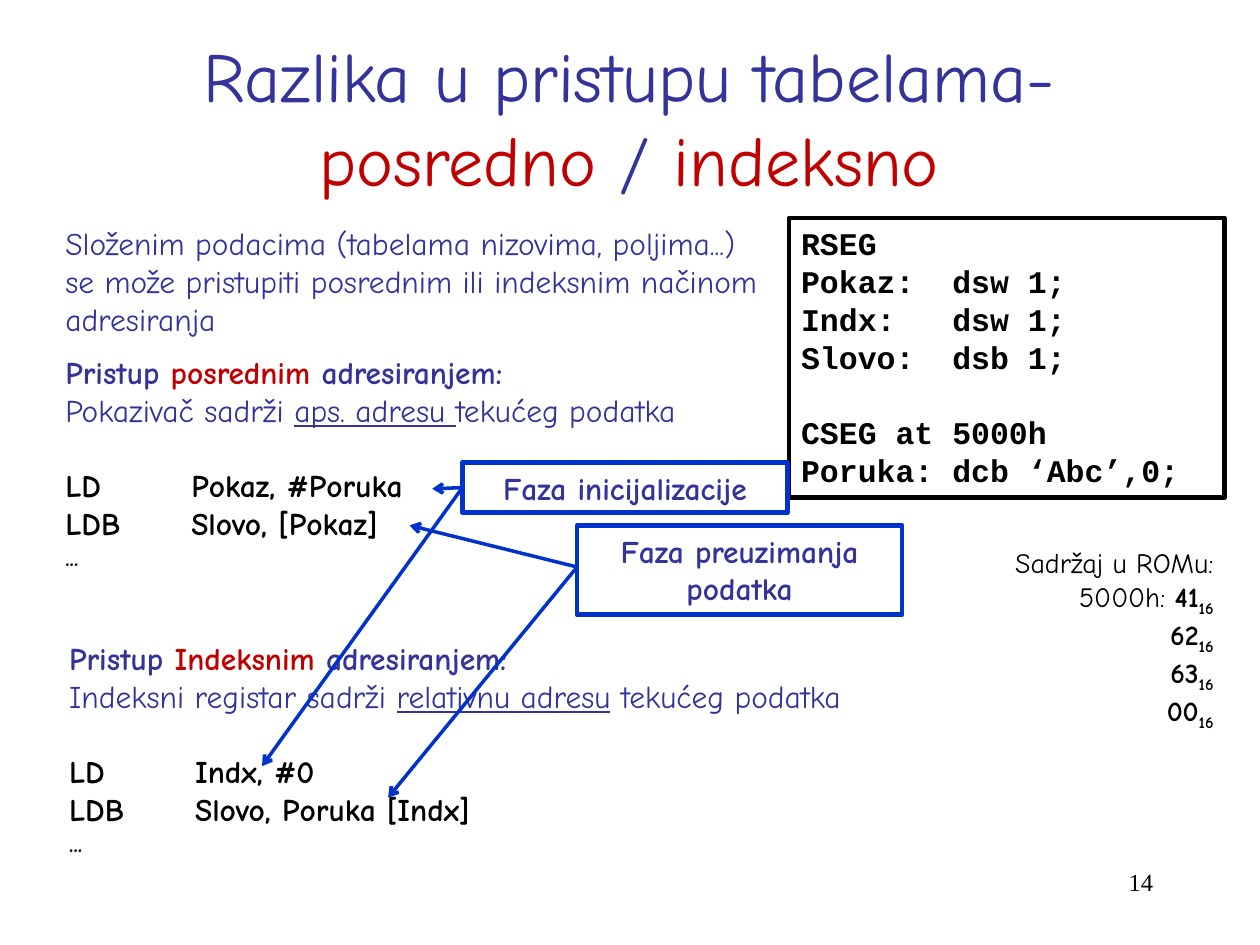
from lxml.etree import SubElement
from pptx import Presentation
from pptx.dml.color import RGBColor
from pptx.enum.shapes import MSO_CONNECTOR as Link, MSO_SHAPE as Shape
from pptx.enum.text import MSO_ANCHOR as Anchor, MSO_AUTO_SIZE as Fit, PP_ALIGN as Align
from pptx.oxml.ns import qn
from pptx.util import Inches, Pt

COLORS = {"navy": "333399", "red": "C00000", "blue": "0033CC",
          "black": "000000", "white": "FFFFFF"}
COMIC, MONO, SERIF = "Comic Neue", "Courier New", "Times New Roman"
GAP = Pt(21.7)


def color(name):
    return RGBColor.from_string(COLORS[name])


def add_run(para, text, size=18, face=COMIC, hue="navy", bold=False, under=False, sub=False):
    run = para.add_run()
    run.text = text
    font = run.font
    font.size, font.name, font.bold = Pt(size), face, bold
    font.color.rgb = color(hue)
    if under:
        font.underline = True
    if sub:
        run._r.get_or_add_rPr().set("baseline", "-25000")


def add_tab(para, stop):
    tabs = SubElement(para._p.get_or_add_pPr(), qn("a:tabLst"))
    SubElement(tabs, qn("a:tab"), pos=str(stop), algn="l")


def fill_text(shape, lines, align=Align.LEFT, anchor=Anchor.TOP, **base):
    """Write lines, each a list of (text, changes to the base format)."""
    frame = shape.text_frame
    frame.word_wrap, frame.auto_size = True, Fit.NONE
    frame.vertical_anchor = anchor
    for num, line in enumerate(lines):
        para = frame.paragraphs[0] if num == 0 else frame.add_paragraph()
        para.alignment = align
        for text, change in line:
            add_run(para, text, **{**base, **change})
    return frame.paragraphs


def add_text(slide, place, lines, **style):
    box = slide.shapes.add_textbox(*map(Inches, place))
    return fill_text(box, lines, **style)


def add_box(slide, place, lines, edge=None, width=2.75, **style):
    box = slide.shapes.add_shape(Shape.RECTANGLE, *map(Inches, place))
    box.shadow.inherit = False
    box.fill.solid()
    box.fill.fore_color.rgb = color("white")
    if edge:
        box.line.color.rgb = color(edge)
        box.line.width = Pt(width)
    else:
        box.line.fill.background()
    return fill_text(box, lines, **style)


def add_arrow(slide, start, end):
    arrow = slide.shapes.add_connector(Link.STRAIGHT, *map(Inches, start + end))
    arrow.line.color.rgb = color("blue")
    arrow.line.width = Pt(2)
    SubElement(arrow.line._get_or_add_ln(), qn("a:tailEnd"), type="arrow")
    SubElement(arrow._element.spPr, qn("a:effectLst"))


def add_access(slide, place, mode, note, code):
    """Describe one way of addressing, with its sample code below."""
    before, key, after = note
    bold = {"bold": True}
    lines = [
        [("Pristup ", bold), (mode, {"bold": True, "hue": "red"}), (" adresiranjem:", bold)],
        [(before, {}), (key, {"under": True}), (after, {})],
        *[[(text, {"bold": True, "hue": "black"})] for text in code],
        [("...", {"bold": True, "hue": "black", "size": 14})],
    ]
    paras = add_text(slide, place, lines)
    for para in paras[2:4]:
        add_tab(para, Inches(1))
    paras[2].space_before = GAP


def add_title(slide):
    title = slide.shapes.title
    title.left, title.top, title.width, title.height = map(Inches, (0.43, 0.3, 9.13, 1.25))
    red = {"hue": "red"}
    fill_text(title, [[("Razlika u pristupu tabelama- ", {}), ("posredno", red),
                       (" / ", {}), ("indeksno", red)]],
              align=Align.CENTER, anchor=Anchor.MIDDLE, size=40)


def add_code(slide):
    code = ["RSEG", "Pokaz:  dsw 1;", "Indx:   dsw 1;", "Slovo:  dsb 1;",
            "CSEG at 5000h", "Poruka: dcb ‘Abc’,0;"]
    paras = add_box(slide, (6.26, 1.73, 3.46, 2.22), [[(text, {})] for text in code],
                    edge="black", width=2.5, face=MONO, hue="black", bold=True)
    for para in paras:
        para.line_spacing = Pt(21.6)
    paras[4].space_before = GAP


def add_bytes(slide):
    lines = [[(byte, {"bold": True}), ("16", {"bold": True, "sub": True})]
             for byte in ("41", "62", "63", "00")]
    lines[0].insert(0, ("5000h: ", {}))
    add_box(slide, (7.68, 4.28, 2.05, 1.45), [[("Sadržaj u ROMu:", {})], *lines],
            align=Align.RIGHT, size=16, hue="black")


def main():
    deck = Presentation()
    deck.slide_width, deck.slide_height = Inches(10), Inches(7.5)
    slide = deck.slides.add_slide(deck.slide_layouts[5])

    add_title(slide)
    add_text(slide, (7.17, 6.83, 2.08, 0.5), [[("14", {})]],
             align=Align.RIGHT, size=14, face=SERIF, hue="black")
    add_text(slide, (0.42, 1.73, 5.75, 1.01),
             [[("Složenim podacima (tabelama nizovima, poljima...) se može pristupiti "
                "posrednim ili indeksnim načinom adresiranja", {})]])
    add_code(slide)
    add_access(slide, (0.42, 2.75, 5.75, 1.85), "posrednim",
               ("Pokazivač sadrži ", "aps. adresu ", "tekućeg podatka"),
               ["LD\tPokaz, #Poruka", "LDB\tSlovo, [Pokaz]"])
    add_bytes(slide)
    add_access(slide, (0.45, 5.02, 7.15, 1.85), "Indeksnim",
               ("Indeksni registar sadrži ", "relativnu adresu", " tekućeg podatka"),
               ["LD\tIndx, #0", "LDB\tSlovo, Poruka [Indx]"])

    for place, text in (((3.67, 3.67, 2.58, 0.4), "Faza inicijalizacije"),
                        ((4.58, 4.17, 2.58, 0.71), "Faza preuzimanja podatka")):
        add_box(slide, place, [[(text, {})]], edge="blue", align=Align.CENTER, bold=True)

    for start, ends in (((3.67, 3.87), [(3.43, 3.88), (2.08, 6.08)]),
                        ((4.58, 4.5), [(3.25, 4.17), (3.08, 6.33)])):
        for end in ends:
            add_arrow(slide, start, end)

    deck.save("out.pptx")


if __name__ == "__main__":
    main()
